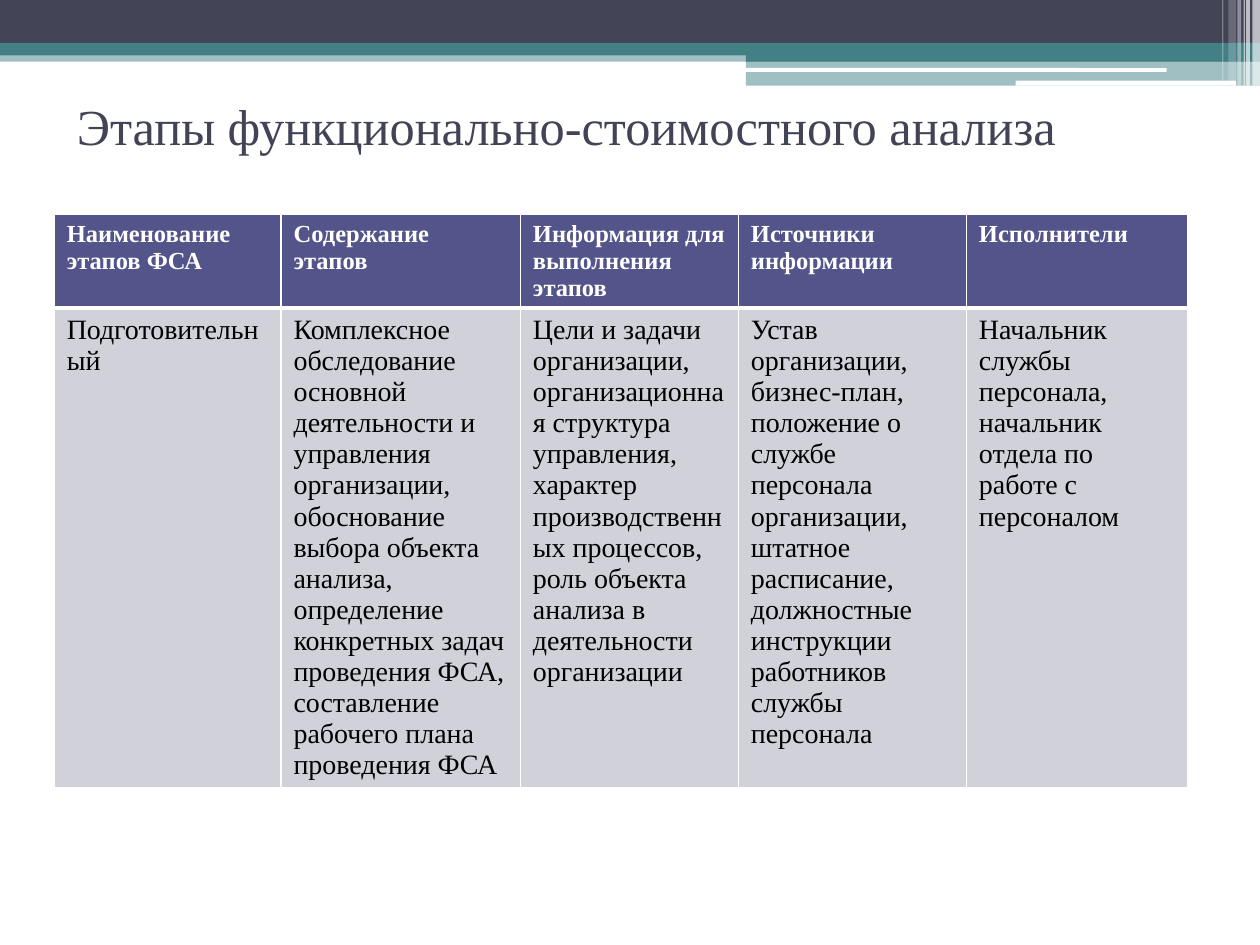
"""Build the slide on the stages of functional cost analysis."""
from typing import NamedTuple

import lxml.etree
import pptx
import pptx.dml.color
import pptx.enum.shapes
import pptx.enum.text
import pptx.oxml.ns
import pptx.util

Inches = pptx.util.Inches
FONT = "Times New Roman"
DARK, TEAL, WHITE, BLACK = "424456", "438086", "FFFFFF", "000000"


class Bar(NamedTuple):
    left: float
    top: float
    width: float
    height: float
    color: str
    opacity: int = 100
    rounded: bool = False


class Stripe(NamedTuple):
    left: float
    width: float
    height: float
    opacity: int


class RowStyle(NamedTuple):
    height: float
    size: int
    bold: bool
    color: str
    fill: str
    top_border: int
    bottom_border: int


class Column(NamedTuple):
    width: float
    heading: str
    content: str


BANDS = [
    Bar(0, 0.4, 10, 0.09, TEAL, 50),
    Bar(0, 0, 10, 0.34, DARK),
    Bar(0, 0.34, 10, 0.1, TEAL),
    Bar(5.92, 0.39, 4.08, 0.1, TEAL),
    Bar(5.92, 0.48, 4.08, 0.2, TEAL, 50),
    Bar(5.91, 0.54, 3.35, 0.03, WHITE, rounded=True),
    Bar(8.06, 0.64, 1.75, 0.04, WHITE, rounded=True),
]
STRIPES = [
    Stripe(9.94, 0.06, 0.68, 65),
    Stripe(9.89, 0.03, 0.68, 65),
    Stripe(9.87, 0.01, 0.68, 60),
    Stripe(9.82, 0.03, 0.68, 40),
    Stripe(9.75, 0.06, 0.64, 20),
    Stripe(9.7, 0.01, 0.64, 30),
]
HEADER = RowStyle(0.74, 14, True, WHITE, "53548A", 1, 3)
BODY = RowStyle(3.8, 16, False, BLACK, "D1D1DA", 3, 1)
COLUMNS = [
    Column(1.8, "Наименование этапов ФСА", "Подготовительный"),
    Column(
        1.9,
        "Содержание этапов",
        "Комплексное обследование основной деятельности и управления "
        "организации, обоснование выбора объекта анализа, определение "
        "конкретных задач проведения ФСА, составление рабочего плана "
        "проведения ФСА",
    ),
    Column(
        1.73,
        "Информация для выполнения этапов",
        "Цели и задачи организации, организационная структура управления, "
        "характер производственных процессов, роль объекта анализа в "
        "деятельности организации",
    ),
    Column(
        1.81,
        "Источники информации",
        "Устав организации, бизнес-план, положение о службе персонала "
        "организации, штатное расписание, должностные инструкции "
        "работников службы персонала",
    ),
    Column(
        1.76,
        "Исполнители",
        "Начальник службы персонала, начальник отдела по работе с персоналом",
    ),
]


def paint(fill, color: str) -> None:
    fill.solid()
    fill.fore_color.rgb = pptx.dml.color.RGBColor.from_string(color)


def add_child(parent, tag: str, **attributes: str):
    return lxml.etree.SubElement(parent, pptx.oxml.ns.qn(tag), attributes)


def format_text(paragraph, size: float, color: str, bold: bool = False) -> None:
    font = paragraph.font
    font.name, font.size, font.bold = FONT, pptx.util.Pt(size), bold
    paint(font.fill, color)
    paragraph.alignment = pptx.enum.text.PP_ALIGN.LEFT


def draw_bar(slide, bar: Bar) -> None:
    kinds = pptx.enum.shapes.MSO_SHAPE
    shape = slide.shapes.add_shape(
        kinds.ROUNDED_RECTANGLE if bar.rounded else kinds.RECTANGLE,
        Inches(bar.left), Inches(bar.top), Inches(bar.width), Inches(bar.height),
    )
    shape.shadow.inherit = False
    shape.line.fill.background()
    paint(shape.fill, bar.color)
    if bar.opacity < 100:
        color = shape.fill._xPr.find(".//" + pptx.oxml.ns.qn("a:srgbClr"))
        add_child(color, "a:alpha", val=str(bar.opacity * 1000))


def draw_title(slide, text: str) -> None:
    title = slide.shapes.title
    title.left, title.top = Inches(0.51), Inches(0.68)
    title.width, title.height = Inches(9), Inches(0.63)
    frame = title.text_frame
    frame.text = text
    frame.auto_size = pptx.enum.text.MSO_AUTO_SIZE.NONE
    frame.vertical_anchor = pptx.enum.text.MSO_ANCHOR.MIDDLE
    format_text(frame.paragraphs[0], 28.8, DARK)


def fill_cell(cell, text: str, style: RowStyle) -> None:
    cell.text = text
    format_text(cell.text_frame.paragraphs[0], style.size, style.color, style.bold)
    properties = cell._tc.get_or_add_tcPr()
    widths = {"L": 1, "R": 1, "T": style.top_border, "B": style.bottom_border}
    for side, width in widths.items():
        border = add_child(properties, f"a:ln{side}", w=str(pptx.util.Pt(width)))
        add_child(add_child(border, "a:solidFill"), "a:srgbClr", val=WHITE)
    paint(cell.fill, style.fill)


def draw_table(slide, columns: list[Column]) -> None:
    styles = [HEADER, BODY]
    table = slide.shapes.add_table(
        len(styles), len(columns), Inches(0.43), Inches(1.7),
        Inches(sum(column.width for column in columns)),
        Inches(sum(style.height for style in styles)),
    ).table
    for row, style in zip(table.rows, styles):
        row.height = Inches(style.height)
    for index, column in enumerate(columns):
        table.columns[index].width = Inches(column.width)
        fill_cell(table.cell(0, index), column.heading, HEADER)
        fill_cell(table.cell(1, index), column.content, BODY)


def main() -> None:
    presentation = pptx.Presentation()
    presentation.slide_width, presentation.slide_height = Inches(10), Inches(7.5)
    slide = presentation.slides.add_slide(presentation.slide_layouts[5])
    for band in BANDS:
        draw_bar(slide, band)
    for stripe in STRIPES:
        draw_bar(slide, Bar(stripe.left, 0, stripe.width, stripe.height, WHITE, stripe.opacity))
    draw_title(slide, "Этапы функционально-стоимостного анализа")
    draw_table(slide, COLUMNS)
    presentation.save("out.pptx")


if __name__ == "__main__":
    main()
